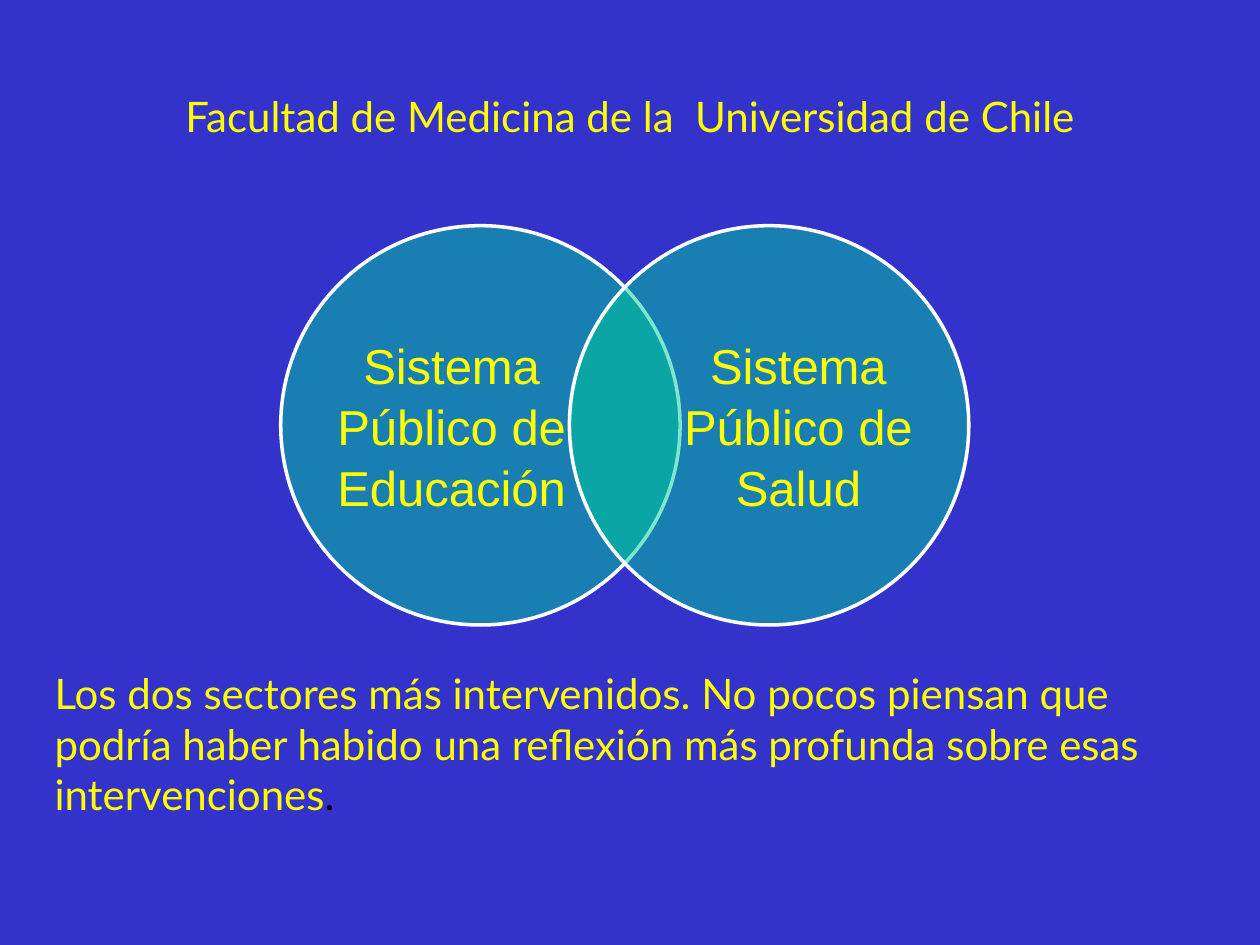
import pptx
import pptx.dml.color
import pptx.enum.shapes
import pptx.enum.text
import pptx.oxml.ns
import pptx.util
from lxml import etree

Cm = pptx.util.Cm
Pt = pptx.util.Pt
RGBColor = pptx.dml.color.RGBColor
ALIGN = pptx.enum.text.PP_ALIGN
ANCHOR = pptx.enum.text.MSO_ANCHOR

BLUE = RGBColor(0x33, 0x33, 0xCC)
GREEN = RGBColor(0x00, 0xCC, 0x99)
YELLOW = RGBColor(0xFF, 0xFF, 0x00)
WHITE = RGBColor(0xFF, 0xFF, 0xFF)
BLACK = RGBColor(0x00, 0x00, 0x00)

# Each paragraph is a list of (text, colour) runs.
TITLE = [[("Facultad de Medicina de la  Universidad de Chile", YELLOW)]]
COMMENT = [[
    ("Los dos sectores más intervenidos. No pocos piensan que podría haber "
     "habido una reflexión más profunda sobre esas intervenciones", YELLOW),
    (".", BLACK),
]]
SECTORS = [
    ["Sistema", "Público de", "Educación"],
    ["Sistema", "Público de", "Salud"],
]

# Centimetres
DIAMETER = 8.05
CIRCLE_LEFT, CIRCLE_TOP, CIRCLE_STEP = 5.66, 4.55, 5.82
LABEL_LEFT, LABEL_TOP, LABEL_STEP = 6.78, 5.49, 6.99
LABEL_WIDTH, LABEL_HEIGHT = 4.65, 6.15
MARGIN, BODY_WIDTH = 0.85, 23.7

BODY_FORMAT = {"name": "Lato", "size": Pt(24)}
LABEL_FORMAT = {"name": "Arial", "size": Pt(28)}
NO_INSETS = {
    "margin_left": 0, "margin_right": 0, "margin_top": 0, "margin_bottom": 0,
    "vertical_anchor": ANCHOR.MIDDLE,
}


def set_attributes(target, values):
    for name, value in values.items():
        setattr(target, name, value)


def add_text(shapes, box, paragraphs, font_format, paragraph_format, frame_format):
    frame = shapes.add_textbox(*map(Cm, box)).text_frame
    set_attributes(frame, {"word_wrap": True, **frame_format})
    for index, runs in enumerate(paragraphs):
        paragraph = frame.add_paragraph() if index else frame.paragraphs[0]
        set_attributes(paragraph, paragraph_format)
        for text, color in runs:
            run = paragraph.add_run()
            run.text = text
            set_attributes(run.font, font_format)
            run.font.color.rgb = color


def add_circle(shapes, left):
    """Add a half-transparent circle with a white outline."""
    circle = shapes.add_shape(
        pptx.enum.shapes.MSO_SHAPE.OVAL,
        Cm(left), Cm(CIRCLE_TOP), Cm(DIAMETER), Cm(DIAMETER))
    circle.shadow.inherit = False
    circle.fill.solid()
    circle.fill.fore_color.rgb = GREEN
    color = circle.fill._xPr.find(".//" + pptx.oxml.ns.qn("a:srgbClr"))
    etree.SubElement(color, pptx.oxml.ns.qn("a:alpha"), val="50000")
    circle.line.color.rgb = WHITE
    circle.line.width = Pt(2)


def main():
    presentation = pptx.Presentation()
    presentation.slide_width, presentation.slide_height = Cm(25.4), Cm(19.05)
    slide = presentation.slides.add_slide(presentation.slide_layouts[6])
    slide.background.fill.solid()
    slide.background.fill.fore_color.rgb = BLUE

    diagram = slide.shapes.add_group_shape()
    for index, lines in enumerate(SECTORS):
        add_circle(diagram.shapes, CIRCLE_LEFT + index * CIRCLE_STEP)
        box = (LABEL_LEFT + index * LABEL_STEP, LABEL_TOP, LABEL_WIDTH, LABEL_HEIGHT)
        add_text(diagram.shapes, box, [[(line, YELLOW)] for line in lines],
                 LABEL_FORMAT, {"alignment": ALIGN.CENTER, "line_spacing": 1.04},
                 NO_INSETS)

    grow = {"auto_size": pptx.enum.text.MSO_AUTO_SIZE.SHAPE_TO_FIT_TEXT}
    for paragraphs, top, height, alignment in [
        (TITLE, 1.7, 1.28, ALIGN.CENTER),
        (COMMENT, 13.34, 3.33, ALIGN.LEFT),
    ]:
        add_text(slide.shapes, (MARGIN, top, BODY_WIDTH, height), paragraphs,
                 BODY_FORMAT, {"alignment": alignment}, grow)

    presentation.save("out.pptx")


if __name__ == "__main__":
    main()
